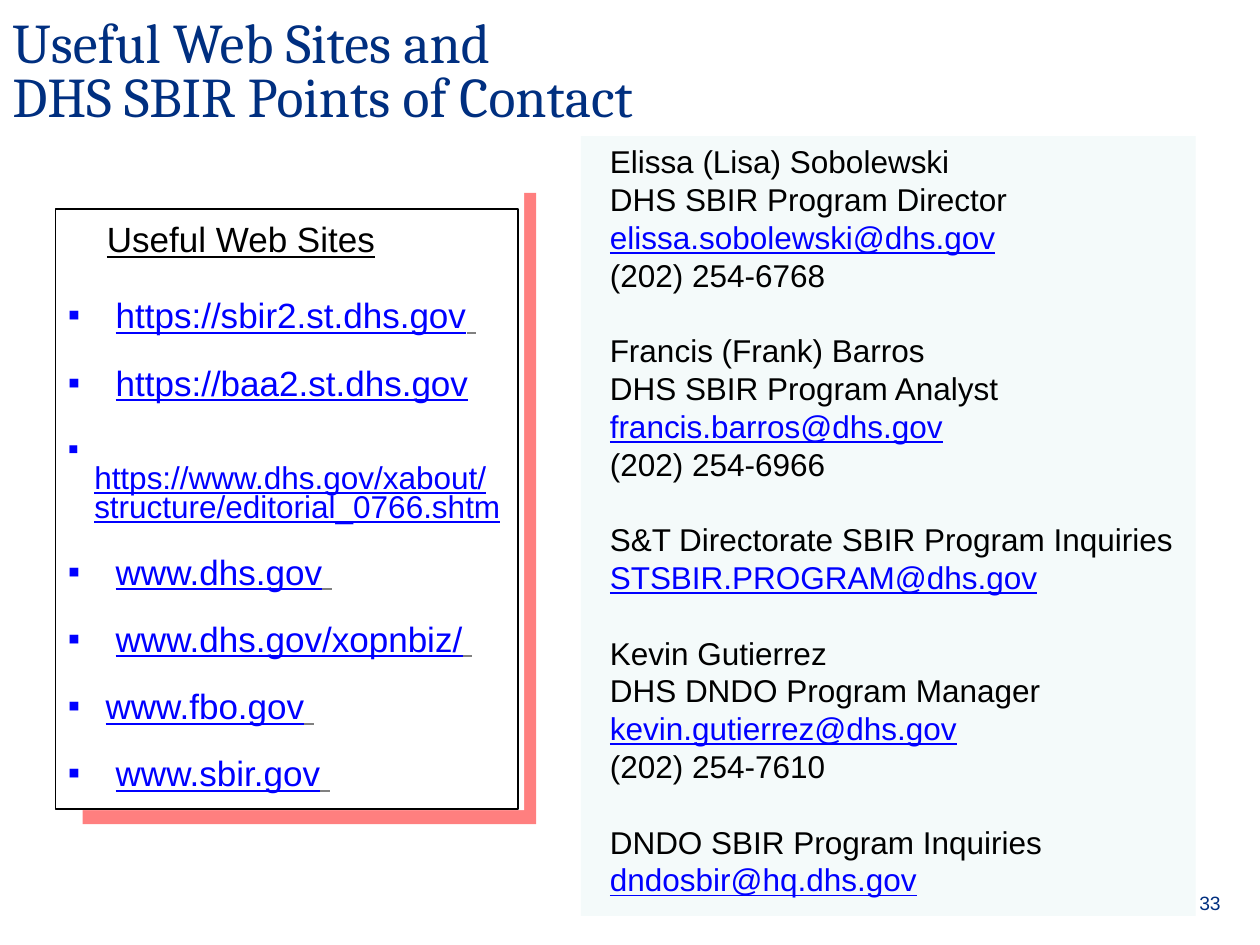
import collections
import pptx
import pptx.dml.color
import pptx.enum.shapes
import pptx.enum.text
import pptx.util
import lxml.etree
import pptx.oxml.ns

Box = collections.namedtuple("Box", "left top width height")
Site = collections.namedtuple("Site", "lines size margin tail")

COLUMN = pptx.util.Inches(0.1)
COLUMNS, ROWS = 100, 75
COLORS = {"navy": "002F80", "link": "0000FF", "text": "000000", "muted": "808080",
          "panel": "BBE0E3", "paper": "FFFFFF", "shadow": "FF0000"}
SITES = [
    Site(["https://sbir2.st.dhs.gov"], 20, 3.8, True),
    Site(["https://baa2.st.dhs.gov"], 20, 3.8, False),
    Site(["", "https://www.dhs.gov/xabout/", "structure/editorial_0766.shtm"], 18, 2.1, False),
    Site(["www.dhs.gov"], 20, 3.8, True),
    Site(["www.dhs.gov/xopnbiz/"], 20, 3.8, True),
    Site(["www.fbo.gov"], 20, 3.0, True),
    Site(["www.sbir.gov"], 20, 3.8, True),
]
CONTACTS = [
    ["Elissa (Lisa) Sobolewski", "DHS SBIR Program Director",
     "elissa.sobolewski@dhs.gov", "(202) 254-6768"],
    ["Francis (Frank) Barros", "DHS SBIR Program Analyst",
     "francis.barros@dhs.gov", "(202) 254-6966"],
    ["S&T Directorate SBIR Program Inquiries", "STSBIR.PROGRAM@dhs.gov"],
    ["Kevin Gutierrez", "DHS DNDO Program Manager",
     "kevin.gutierrez@dhs.gov", "(202) 254-7610"],
    ["DNDO SBIR Program Inquiries", "dndosbir@hq.dhs.gov"],
]


def grid(count):
    """Turn a number of grid columns or rows into a length."""
    return pptx.util.Emu(round(count * COLUMN))


def color(name):
    """Look up a named colour."""
    return pptx.dml.color.RGBColor.from_string(COLORS[name])


def add_node(parent, tag, **attributes):
    """Append a DrawingML element to a parent element."""
    node = lxml.etree.SubElement(parent, pptx.oxml.ns.qn(tag))
    for key, value in attributes.items():
        node.set(key, str(value))
    return node


def add_rectangle(page, box, fill=None, line=None):
    """Add a flat rectangle with an optional fill and outline."""
    shape = page.shapes.add_shape(
        pptx.enum.shapes.MSO_SHAPE.RECTANGLE, *map(grid, box))
    shape.shadow.inherit = False
    if fill:
        shape.fill.solid()
        shape.fill.fore_color.rgb = color(fill)
    else:
        shape.fill.background()
    if line:
        shape.line.color.rgb = color(line)
        shape.line.width = pptx.util.Pt(1)
    else:
        shape.line.fill.background()
    return shape


def set_frame(shape, anchor, left=1, top=0.5, right=1, bottom=0.5):
    """Set anchor and insets of a shape's text and return its frame."""
    frame = shape.text_frame
    frame.word_wrap = True
    frame.vertical_anchor = anchor
    frame.margin_left, frame.margin_top = grid(left), grid(top)
    frame.margin_right, frame.margin_bottom = grid(right), grid(bottom)
    return frame


def add_paragraph(frame, first=False):
    """Return the first paragraph or a new one, aligned left."""
    para = frame.paragraphs[0] if first else frame.add_paragraph()
    para.alignment = pptx.enum.text.PP_ALIGN.LEFT
    return para


def add_span(para, text, size, tint="text", underline=False, face="Arial"):
    """Add one formatted run."""
    span = para.add_run()
    span.text = text
    span.font.name = face
    span.font.size = pptx.util.Pt(size)
    span.font.color.rgb = color(tint)
    span.font.underline = underline


def add_title(page, box):
    """Place the two-line title."""
    shape = page.shapes.add_textbox(*map(grid, box))
    para = add_paragraph(set_frame(shape, pptx.enum.text.MSO_ANCHOR.MIDDLE), True)
    para.line_spacing = 0.8
    add_span(para, "Useful Web Sites and", 32, "navy", face="Cambria")
    para.add_line_break()
    add_span(para, "DHS SBIR Points of Contact", 32, "navy", face="Cambria")


def add_page_number(page, box):
    """Place the page number."""
    shape = page.shapes.add_textbox(*map(grid, box))
    para = add_paragraph(set_frame(shape, pptx.enum.text.MSO_ANCHOR.BOTTOM), True)
    add_span(para, "33", 11, "navy")


def add_backing(page, box):
    """Place the white card that casts the red shadow."""
    card = add_rectangle(page, box, "paper")
    effects = card._element.spPr.find(pptx.oxml.ns.qn("a:effectLst"))
    shadow = add_node(effects, "a:outerShdw", blurRad=0, dist=pptx.util.Pt(10.6),
                      dir=49 * 60000, algn="ctr", rotWithShape=0)
    tint = add_node(shadow, "a:srgbClr", val=COLORS["shadow"])
    add_node(tint, "a:alpha", val=50000)


def add_bullet(para, margin):
    """Give a paragraph a hanging square bullet."""
    properties = para._p.get_or_add_pPr()
    properties.set("marL", str(grid(margin)))
    properties.set("indent", str(-grid(margin)))
    add_node(add_node(properties, "a:buClr"), "a:srgbClr", val=COLORS["link"])
    add_node(properties, "a:buFont", typeface="Arial")
    add_node(properties, "a:buChar", char="▪")


def add_sites(page, box):
    """Place the outlined list of web sites."""
    shape = add_rectangle(page, box, line="text")
    frame = set_frame(shape, pptx.enum.text.MSO_ANCHOR.TOP, top=0.7, right=0)
    heading = add_paragraph(frame, True)
    heading._p.get_or_add_pPr().set("marL", str(grid(3.1)))
    add_span(heading, "Useful Web Sites", 20, underline=True)
    for index, site in enumerate(SITES):
        para = add_paragraph(frame)
        para.line_spacing = pptx.util.Pt(site.size * 0.92)
        para.space_before = pptx.util.Pt(20 if index else 25)
        add_bullet(para, site.margin)
        for number, line in enumerate(site.lines):
            if number:
                para.add_line_break()
            if line:
                add_span(para, line, site.size, "link", True)
        if site.tail:
            add_span(para, " ", site.size, "muted", True)


def add_contacts(page, box):
    """Place the tinted panel of contacts."""
    panel = add_rectangle(page, box, "panel")
    tint = panel._element.spPr.find(".//" + pptx.oxml.ns.qn("a:srgbClr"))
    add_node(tint, "a:alpha", val=16000)
    frame = set_frame(panel, pptx.enum.text.MSO_ANCHOR.TOP, left=2.3, right=0)
    pitch = pptx.util.Pt(21.6)
    for index, contact in enumerate(CONTACTS):
        for number, line in enumerate(contact):
            para = add_paragraph(frame, index == number == 0)
            para.line_spacing = pitch
            if index and number == 0:
                para.space_before = pitch
            is_link = "@" in line
            add_span(para, line, 18, "link" if is_link else "text", is_link)


def main():
    """Build and save the deck."""
    deck = pptx.Presentation()
    deck.slide_width, deck.slide_height = grid(COLUMNS), grid(ROWS)
    page = deck.slides.add_slide(deck.slide_layouts[6])
    add_page_number(page, Box(94.2, 70.3, 5, 2.8))
    add_contacts(page, Box(46.1, 10.8, 48.8, 61.9))
    add_backing(page, Box(5.6, 14.2, 36, 50.1))
    add_sites(page, Box(4.4, 16.6, 36.7, 47.6))
    add_title(page, Box(0, 1.3, 91.1, 9.2))
    deck.save("out.pptx")


if __name__ == "__main__":
    main()
